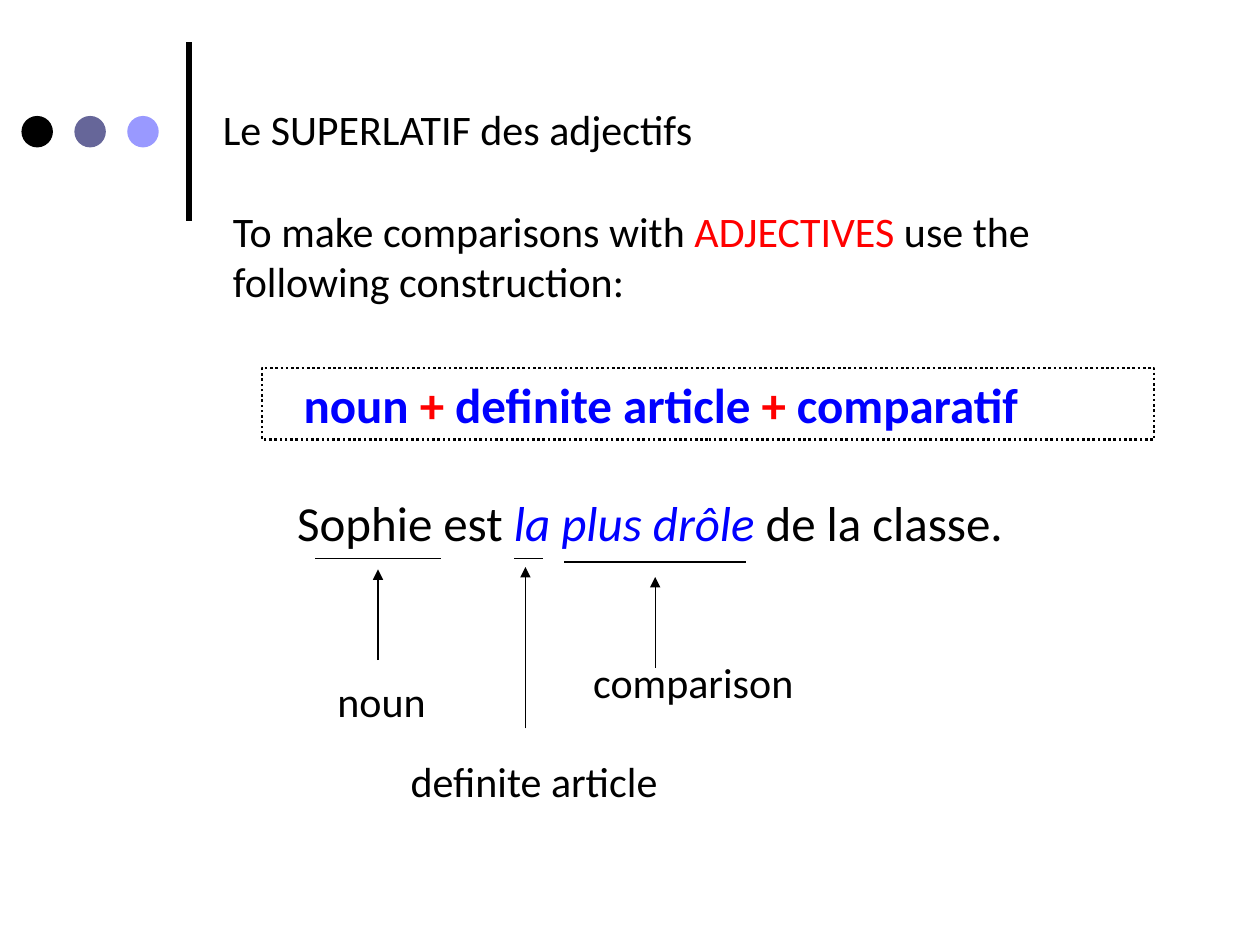
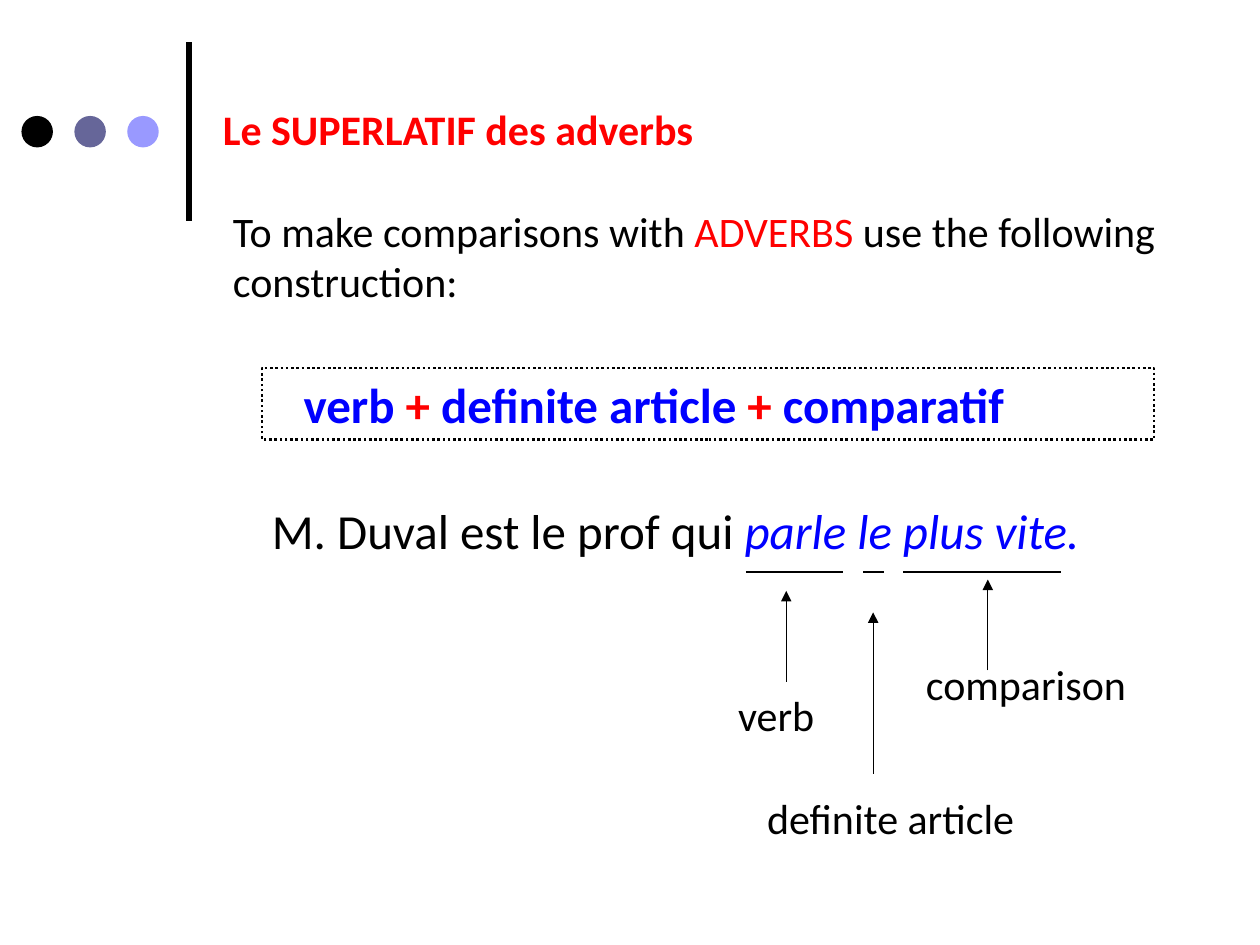
from lxml.etree import SubElement
from pptx import Presentation
from pptx.dml.color import RGBColor
from pptx.enum.dml import MSO_LINE_DASH_STYLE as DASH
from pptx.enum.shapes import MSO_CONNECTOR as CONNECTOR, MSO_SHAPE as SHAPE
from pptx.enum.text import PP_ALIGN as ALIGN
from pptx.oxml.ns import qn
from pptx.util import Inches, Pt

FONT = "Calibri"
BLACK, RED, BLUE = "000000", "FF0000", "0000FF"
DOT_COLORS = (BLACK, "666699", "9999FF")
SHORT_ARROW, LONG_ARROW = 0.72, 1.28
NARROW_LABEL, WIDE_LABEL = 1.11, 2.48


def rgb(value):
    return RGBColor.from_string(value)


def write(sp, runs, size, bold=False):
    tf = sp.text_frame
    tf.word_wrap = True
    p = tf.paragraphs[0]
    p.alignment = ALIGN.LEFT
    p.font.name, p.font.size, p.font.bold = FONT, Pt(size), bold
    if len(runs) == 1:
        p.font.color.rgb = rgb(runs[0][1])
    for text, color, *style in runs:
        r = p.add_run()
        r.text = text
        if len(runs) > 1:
            r.font.color.rgb = rgb(color)
        if "italic" in style:
            r.font.italic = True


def add_text(s, box, runs, size=24, bold=False):
    sp = s.shapes.add_textbox(*map(Inches, box))
    write(sp, runs, size, bold)


def add_line(s, x1, y1, x2, y2, width=0.75, arrow=False):
    line = s.shapes.add_connector(CONNECTOR.STRAIGHT, *map(Inches, (x1, y1, x2, y2)))
    line.line.color.rgb = rgb(BLACK)
    line.line.width = Pt(width)
    if arrow:
        SubElement(line.line._get_or_add_ln(), qn("a:tailEnd"), type="triangle")
    SubElement(line._element.spPr, qn("a:effectLst"))


def add_frame(s):
    add_line(s, 1.5, 1.75, 1.5, 0.33, width=3)
    for i, color in enumerate(DOT_COLORS):
        box = (0.17 + 0.42 * i, 0.92, 0.25, 0.25)
        dot = s.shapes.add_shape(SHAPE.OVAL, *map(Inches, box))
        dot.shadow.inherit = False
        dot.fill.solid()
        dot.fill.fore_color.rgb = rgb(color)
        dot.line.fill.background()


def add_formula(s, first_part):
    box = (2.08, 2.92, 7.08, 0.57)
    sp = s.shapes.add_shape(SHAPE.RECTANGLE, *map(Inches, box))
    sp.shadow.inherit = False
    sp.fill.background()
    sp.line.color.rgb = rgb(BLACK)
    sp.line.width = Pt(1.5)
    sp.line.dash_style = DASH.ROUND_DOT
    sp.text_frame.margin_left = Inches(0.33)
    runs = [(first_part + " ", BLUE), ("+", RED), (" definite article ", BLUE),
            ("+ ", RED), ("comparatif", BLUE)]
    write(sp, runs, 28, bold=True)


def add_marker(s, label, left, top, width, underline, arrow):
    add_text(s, (left, top, width, 0.5), [(label, BLACK)])
    start, end, y = underline
    add_line(s, start, y, end, y)
    x, tip, length = arrow
    add_line(s, x, tip + length, x, tip, arrow=True)


def add_lesson(prs, title, title_color, title_bold, topic, first_part,
               sentence_at, sentence, markers):
    s = prs.slides.add_slide(prs.slide_layouts[6])
    add_frame(s)
    add_text(s, (1.67, 0.77, 8.33, 0.5), [(title, title_color)], bold=title_bold)
    add_text(s, (1.75, 1.58, 7.75, 0.91),
             [("To make comparisons with ", BLACK), (topic, RED),
              (" use the following construction:", BLACK)])
    add_formula(s, first_part)
    add_text(s, (*sentence_at, 7.55, 0.57), sentence, size=28)
    for marker in markers:
        add_marker(s, *marker)


def main():
    prs = Presentation()
    prs.slide_width, prs.slide_height = Inches(10), Inches(7.5)
    add_lesson(
        prs, "Le SUPERLATIF des adjectifs", BLACK, False, "ADJECTIVES", "noun",
        (2.26, 3.86),
        [("Sophie est ", BLACK), ("la plus drôle ", BLUE, "italic"),
         ("de la classe.", BLACK)],
        [("noun", 2.58, 5.31, NARROW_LABEL, (2.5, 3.5, 4.43), (3, 4.52, SHORT_ARROW)),
         ("definite article", 3.16, 5.95, WIDE_LABEL, (4.08, 4.31, 4.43),
          (4.17, 4.5, LONG_ARROW)),
         ("comparison", 4.61, 5.16, WIDE_LABEL, (4.48, 5.92, 4.46),
          (5.2, 4.58, SHORT_ARROW))])
    add_lesson(
        prs, "Le SUPERLATIF des adverbs", RED, True, "ADVERBS", "verb",
        (2.06, 3.92),
        [("M. Duval est le prof qui ", BLACK), ("parle le plus vite.", BLUE, "italic")],
        [("verb", 5.76, 5.42, NARROW_LABEL, (5.92, 6.69, 4.54), (6.24, 4.69, SHORT_ARROW)),
         ("definite article", 5.99, 6.24, WIDE_LABEL, (6.85, 7.02, 4.54),
          (6.93, 4.86, LONG_ARROW)),
         ("comparison", 7.25, 5.18, WIDE_LABEL, (7.17, 8.42, 4.54),
          (7.84, 4.6, SHORT_ARROW))])
    prs.save("out.pptx")


if __name__ == "__main__":
    main()
